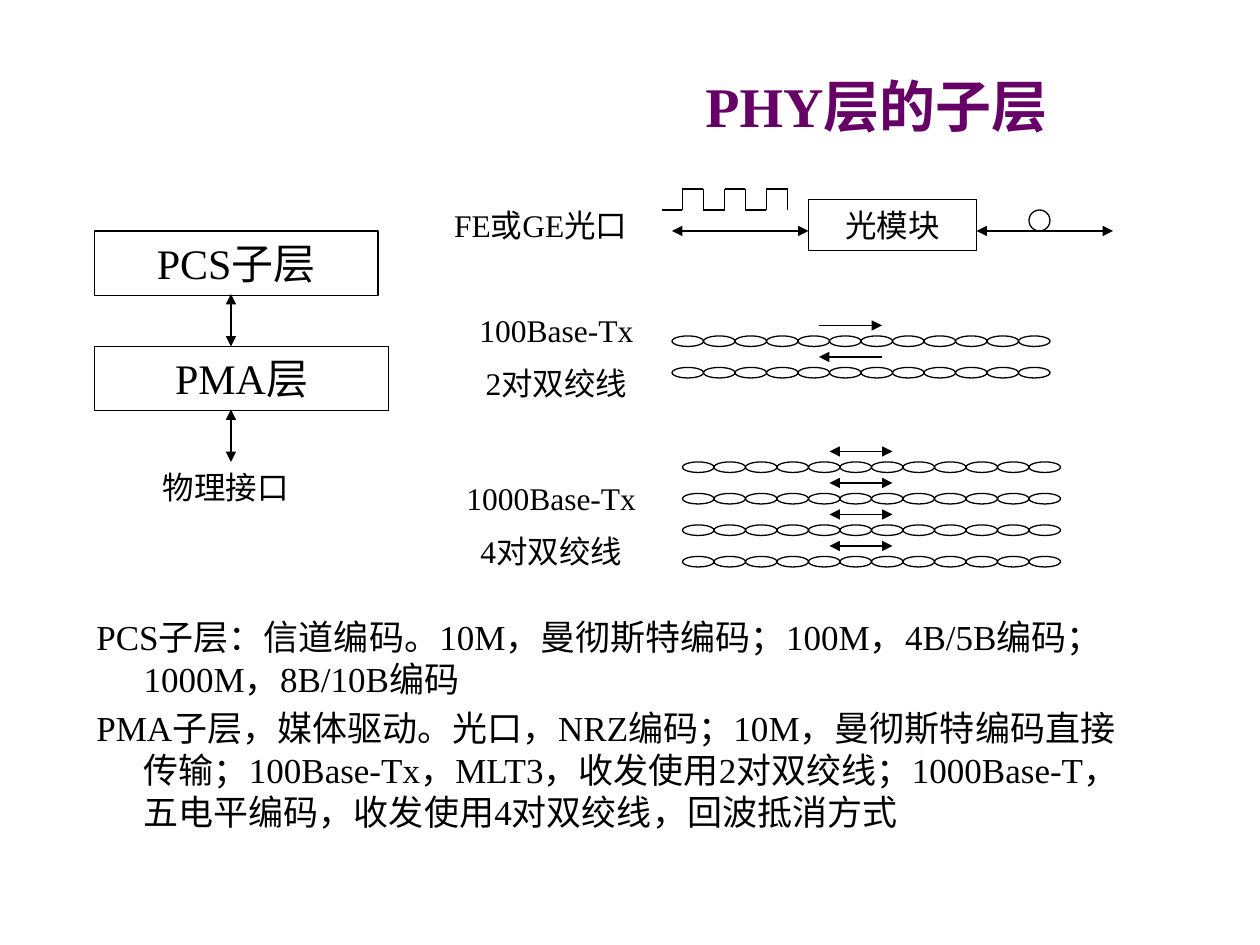
from itertools import pairwise

from lxml.etree import SubElement
from pptx import Presentation
from pptx.dml.color import RGBColor
from pptx.enum.shapes import MSO_CONNECTOR as Connector, MSO_SHAPE as Shape
from pptx.enum.text import MSO_ANCHOR as Anchor, PP_ALIGN as Align
from pptx.oxml.ns import qn
from pptx.util import Emu, Pt

PX = 9525  # 96 px to the inch
FONT = "Times New Roman"
BLACK, WHITE, PURPLE = "000000", "FFFFFF", "660066"
THIN, THICK = 0.75, 1

# Text blocks: (left, top, width, height), paragraphs, size
TITLE = (448, 48, 440, 64), ["PHY层的子层"], 32
NOTES = (64, 464, 816, 192), [
    "PCS子层：信道编码。10M，曼彻斯特编码；100M，4B/5B编码；1000M，8B/10B编码",
    "PMA子层，媒体驱动。光口，NRZ编码；10M，曼彻斯特编码直接传输；"
    "100Base-Tx，MLT3，收发使用2对双绞线；"
    "1000Base-T，五电平编码，收发使用4对双绞线，回波抵消方式",
], 20
BOXES = [
    ((72, 176, 216, 49), ["PCS子层"], 24),
    ((72, 264, 224, 49), ["PMA层"], 24),
    ((616, 152, 128, 39), ["光模块"], 18),
]
LABELS = [
    ((104, 352, 136, 38), ["物理接口"], 18),
    ((336, 152, 152, 38), ["FE或GE光口"], 18),
    ((352, 232, 144, 82), ["100Base-Tx", "2对双绞线"], 18),
    ((344, 360, 152, 82), ["1000Base-Tx", "4对双绞线"], 18),
]

LINKS = [  # two-way arrows: start, end
    ((176, 224), (176, 264)),
    ((176, 312), (176, 352)),
    ((512, 176), (616, 176)),
    ((744, 176), (848, 176)),
]
FIBER_LOOP = (784, 160, 16, 16)
SIGNAL_LEFT, SIGNAL_LOW, SIGNAL_STEP, PULSES = 504, 160, 16, 3

# Cables: left, top of first pair, arrow ends (head, tail) for each pair
CABLES = [
    (512, 256, [(False, True), (True, False)]),
    (520, 352, [(True, True)] * 4),
]
TWISTS, TWIST_W, TWIST_H, PAIR_GAP = 12, 24, 8, 24
ARROW_INDENT, ARROW_RISE, ARROW_LENGTH = 112, 8, 48

prs = Presentation()
prs.slide_width, prs.slide_height = Emu(960 * PX), Emu(720 * PX)
slide = prs.slides.add_slide(prs.slide_layouts[6])


def px(*lengths):
    return [Emu(length * PX) for length in lengths]


def color(hex_value):
    return RGBColor.from_string(hex_value)


def add_text(shape, paragraphs, size, spacing=0.5, hanging=0, align=Align.CENTER,
             anchor=Anchor.TOP, ink=BLACK, bold=False):
    """Write paragraphs; spacing is the gap between them as a share of size."""
    frame = shape.text_frame
    frame.word_wrap = True
    frame.vertical_anchor = anchor
    frame.text = "\n".join(paragraphs)
    for index, paragraph in enumerate(frame.paragraphs):
        paragraph.alignment = align
        paragraph.space_before = Pt(size * spacing if index else 0)
        if hanging:
            props = paragraph._p.get_or_add_pPr()
            props.set("marL", str(hanging * PX))
            props.set("indent", str(-hanging * PX))
        for name, value in {"name": FONT, "size": Pt(size), "bold": bold}.items():
            setattr(paragraph.font, name, value)
        paragraph.font.color.rgb = color(ink)


def add_outline(kind, place):
    shape = slide.shapes.add_shape(kind, *px(*place))
    shape.shadow.inherit = False
    shape.fill.background()
    shape.line.color.rgb = color(BLACK)
    shape.line.width = Pt(THIN)
    return shape


def add_line(start, end, width=THIN, head=False, tail=False):
    line = slide.shapes.add_connector(Connector.STRAIGHT, *px(*start, *end))
    line.line.color.rgb = color(BLACK)
    line.line.width = Pt(width)
    for tag, shown in {"a:headEnd": head, "a:tailEnd": tail}.items():
        if shown:
            SubElement(line.line._get_or_add_ln(), qn(tag), type="triangle")
    SubElement(line._element.spPr, qn("a:effectLst"))


def add_label(place, paragraphs, size, fill=None, **style):
    label = slide.shapes.add_textbox(*px(*place))
    if fill:
        label.fill.solid()
        label.fill.fore_color.rgb = color(fill)
    add_text(label, paragraphs, size, **style)


add_label(*TITLE, fill=WHITE, anchor=Anchor.MIDDLE, ink=PURPLE, bold=True)
add_label(*NOTES, fill=WHITE, spacing=0.2, hanging=36, align=Align.LEFT)
for place, paragraphs, size in BOXES:
    add_text(add_outline(Shape.RECTANGLE, place), paragraphs, size)
for label in LABELS:
    add_label(*label)
for start, end in LINKS:
    add_line(start, end, THICK, head=True, tail=True)
add_outline(Shape.OVAL, FIBER_LOOP)

signal = [(SIGNAL_LEFT, SIGNAL_LOW)]
for pulse in range(PULSES):
    rise = SIGNAL_LEFT + (2 * pulse + 1) * SIGNAL_STEP
    fall, high = rise + SIGNAL_STEP, SIGNAL_LOW - SIGNAL_STEP
    signal += [(rise, SIGNAL_LOW), (rise, high), (fall, high), (fall, SIGNAL_LOW)]
for start, end in pairwise(signal):
    add_line(start, end)

for left, first_top, directions in CABLES:
    for pair, (head, tail) in enumerate(directions):
        top = first_top + pair * PAIR_GAP
        for twist in range(TWISTS):
            add_outline(Shape.OVAL, (left + twist * TWIST_W, top, TWIST_W, TWIST_H))
        arrow_x, arrow_y = left + ARROW_INDENT, top - ARROW_RISE
        add_line((arrow_x, arrow_y), (arrow_x + ARROW_LENGTH, arrow_y), head=head, tail=tail)

prs.save("out.pptx")
